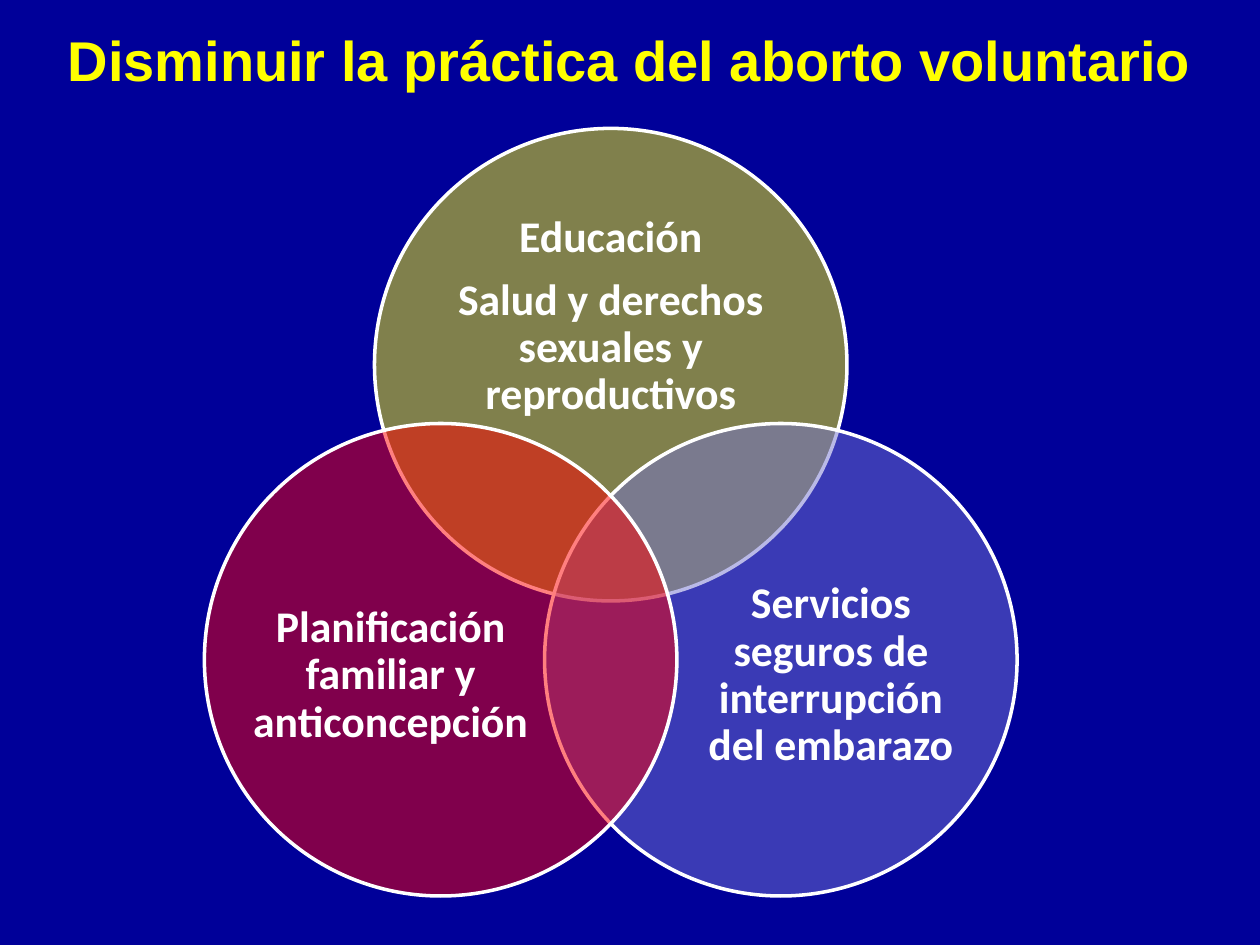
from lxml import etree
from pptx import Presentation
from pptx import util as u
from pptx.dml.color import RGBColor
from pptx.enum import shapes, text
from pptx.oxml import ns

NAVY = RGBColor(0x00, 0x00, 0x99)
YELLOW = RGBColor(0xFF, 0xFF, 0x00)
LILAC = RGBColor(0x75, 0x75, 0xD1)
RED = RGBColor(0xFF, 0x00, 0x00)
WHITE = RGBColor(0xFF, 0xFF, 0xFF)

SIZE = 270
LOW = 242
MID = 214
SIDE = 97.2


class Venn:
    """Holds the style and the slide of a Venn diagram."""

    def __init__(self, deck):
        self.slide = deck.slides.add_slide(deck.slide_layouts[6])
        fill = self.slide.background.fill
        fill.solid()
        fill.fore_color.rgb = NAVY

    def label(self, box, lines, font, size, color, inset=0, line=0.9, after=9):
        shape = self.slide.shapes.add_textbox(*map(u.Pt, box))
        frame = shape.text_frame
        frame.text = "\n".join(lines)
        frame.word_wrap = True
        frame.vertical_anchor = text.MSO_ANCHOR.MIDDLE
        frame.margin_left = frame.margin_right = u.Pt(inset)
        frame.margin_top = frame.margin_bottom = u.Pt(inset / 2)
        for para in frame.paragraphs:
            para.alignment = text.PP_ALIGN.CENTER
            para.line_spacing = line
            para.space_after = u.Pt(after)
            for run in para.runs:
                run.font.name = font
                run.font.size = u.Pt(size)
                run.font.bold = True
                run.font.color.rgb = color

    def title(self, words):
        self.label((0, 0, 720, 67.5), [words], "Arial", 32, YELLOW, 7.2, 1, 0)

    def circle(self, left, top, color):
        shape = self.slide.shapes.add_shape(
            shapes.MSO_SHAPE.OVAL, u.Pt(left), u.Pt(top), u.Pt(SIZE), u.Pt(SIZE))
        shape.shadow.inherit = False
        shape.fill.solid()
        shape.fill.fore_color.rgb = color
        tint = shape.fill._xPr.find(ns.qn("a:solidFill"))[0]
        etree.SubElement(tint, ns.qn("a:alpha"), val="50000")
        shape.line.color.rgb = WHITE
        shape.line.width = u.Pt(2)

    def topic(self, left, top, color, inner, lines):
        dx, dy, width, height = inner
        self.circle(left, top, color)
        self.label((left + dx, top + dy, width, height), lines, "Calibri", 25, WHITE)


def main():
    deck = Presentation()
    deck.slide_width, deck.slide_height = u.Pt(720), u.Pt(540)
    venn = Venn(deck)
    venn.title("Disminuir la práctica del aborto voluntario")
    venn.topic(MID, 73.4, YELLOW, (36, 46.8, 198, 121.7),
               ["Educación", "Salud y derechos sexuales y reproductivos"])
    venn.topic(MID + SIDE, LOW, LILAC, (82.6, 69.8, 162, 148.5),
               ["Servicios seguros de interrupción del embarazo"])
    venn.topic(MID - SIDE, LOW, RED, (25.4, 69.8, 162, 148.5),
               ["Planificación familiar y anticoncepción"])
    deck.save("out.pptx")


if __name__ == "__main__":
    main()
